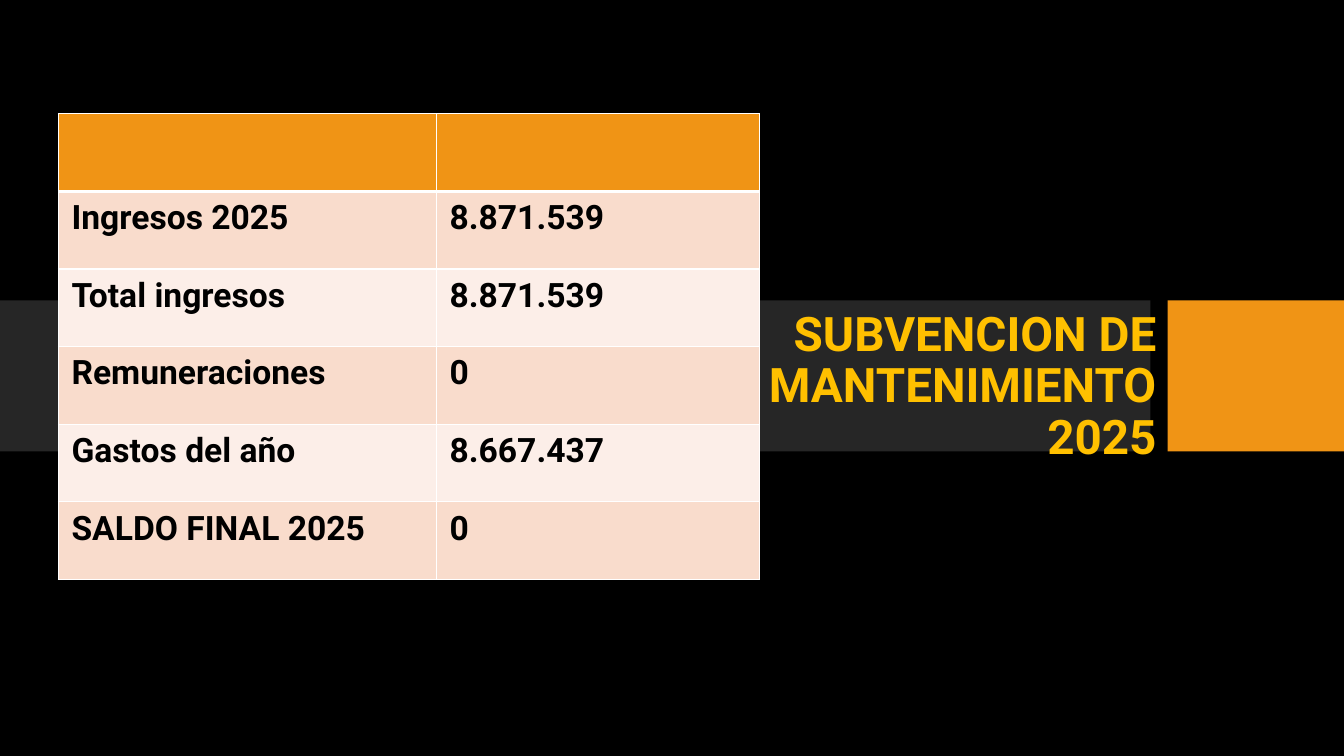
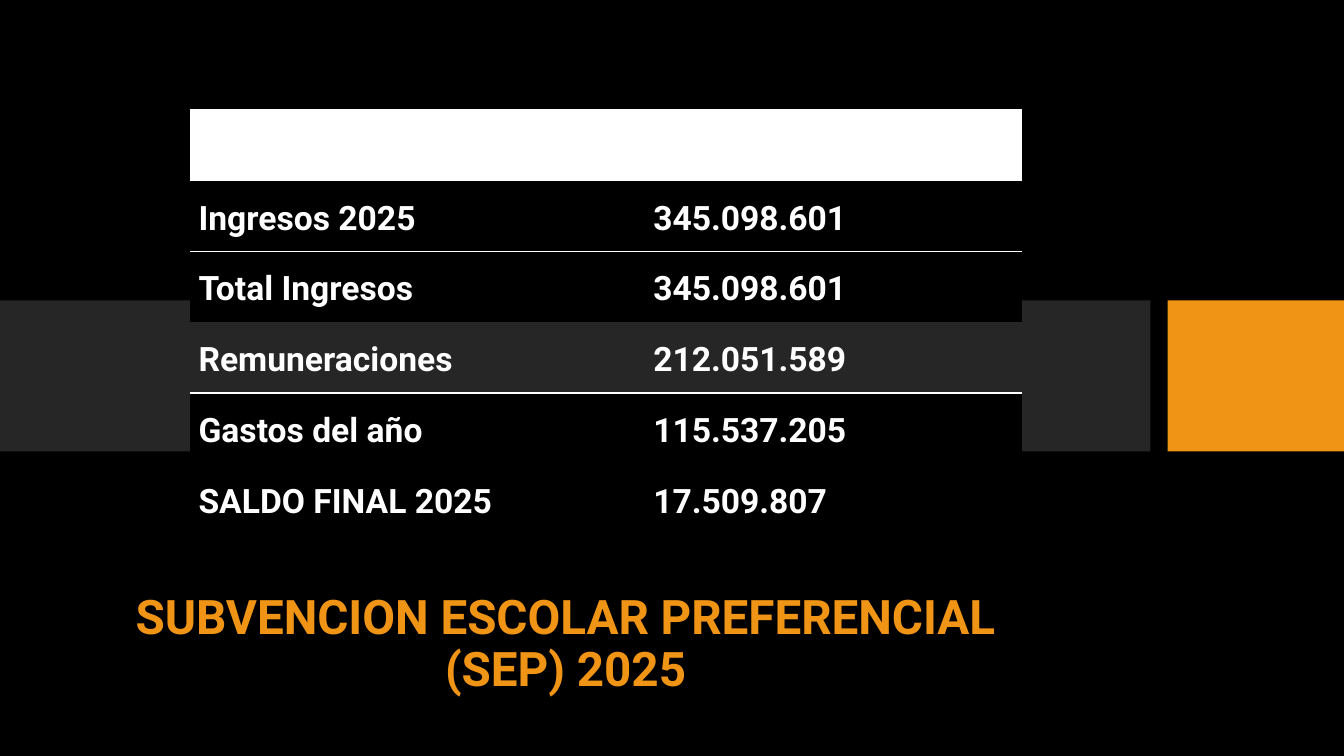
"""Build two budget slides, each with a title and a table of amounts."""
from dataclasses import dataclass

from lxml import etree
from pptx import Presentation
from pptx.dml.color import RGBColor
from pptx.enum.shapes import MSO_SHAPE
from pptx.enum.text import MSO_ANCHOR, MSO_AUTO_SIZE, PP_ALIGN
from pptx.oxml.ns import qn
from pptx.util import Emu, Pt

RECTANGLE = MSO_SHAPE.RECTANGLE
BOTTOM = MSO_ANCHOR.BOTTOM
NO_AUTOFIT = MSO_AUTO_SIZE.NONE
CENTER, RIGHT = PP_ALIGN.CENTER, PP_ALIGN.RIGHT
EMU_PER_PX = 9144
TITLE_ONLY = 5


@dataclass(frozen=True)
class Theme:
    """Colours, font and type sizes of the deck."""
    black: str = "000000"
    white: str = "FFFFFF"
    band: str = "262626"
    orange: str = "F09415"
    gold: str = "FFC000"
    peach: str = "F9DCCC"
    pale_peach: str = "FCEEE8"
    font: str = "Roboto"
    title_size: int = 34
    cell_size: int = 24


THEME = Theme()


@dataclass(frozen=True)
class TableLook:
    """Colours, rules (points) and insets (px) of one table."""
    text_color: str
    row_fills: tuple
    row_rules: tuple
    column_rule: int
    insets: tuple


BANDED = TableLook(
    THEME.black,
    (THEME.orange,) + (THEME.peach, THEME.pale_peach) * 2 + (THEME.peach,),
    (1, 3, 1, 1, 1, 1, 1), 1, (13, 7, 13, 7))
RULED = TableLook(
    THEME.white,
    (THEME.white,) + (None, THEME.black) * 2 + (None,),
    (1, 0, 1, 0, 1, 0, 0), 0, (9, 18, 6, 13))


def px(length):
    """Turn px into EMU."""
    return Emu(length * EMU_PER_PX)


def paint(fill, color):
    """Fill with a colour, or leave clear when there is none."""
    if color is None:
        fill.background()
    else:
        fill.solid()
        fill.fore_color.rgb = RGBColor.from_string(color)


def style_font(font, size, color):
    """Apply the bold deck font."""
    font.name = THEME.font
    font.size = Pt(size)
    font.bold = True
    font.color.rgb = RGBColor.from_string(color)


def add_layout_band(slide, layout, box, color):
    """Draw a plain band and hand it over to the layout."""
    band = slide.shapes.add_shape(RECTANGLE, *map(px, box))
    band.shadow.inherit = False
    paint(band.fill, color)
    band.line.fill.background()
    layout.shapes.element.append(band.element)


def set_title(slide, text, box, color, alignment):
    """Place and format the title placeholder."""
    title = slide.shapes.title
    title.left, title.top, title.width, title.height = map(px, box)
    frame = title.text_frame
    frame.text = text
    frame.word_wrap = True
    frame.auto_size = NO_AUTOFIT
    frame.vertical_anchor = BOTTOM
    paragraph = frame.paragraphs[0]
    paragraph.alignment = alignment
    paragraph.line_spacing = 0.9
    style_font(paragraph.font, THEME.title_size, color)


def add_border(cell, side, width):
    """Add a white border, or an invisible one for width 0."""
    properties = cell._tc.get_or_add_tcPr()
    line = etree.SubElement(properties, qn(f"a:ln{side}"), w=str(Pt(width)))
    if width:
        solid = etree.SubElement(line, qn("a:solidFill"))
        etree.SubElement(solid, qn("a:srgbClr"), val=THEME.white)
    else:
        etree.SubElement(line, qn("a:noFill"))


def add_budget_table(slide, position, widths, heights, entries, look):
    """Add a table with an empty header row above the entries."""
    size = sum(widths), sum(heights)
    table = slide.shapes.add_table(
        len(heights), len(widths), *map(px, (*position, *size))).table
    for column, width in zip(table.columns, widths):
        column.width = px(width)
    for index, (row, height, texts) in enumerate(
            zip(table.rows, heights, [("", ""), *entries])):
        row.height = px(height)
        borders = {"L": look.column_rule, "R": look.column_rule,
                   "T": look.row_rules[index], "B": look.row_rules[index + 1]}
        for cell, text in zip(row.cells, texts):
            for side, width in borders.items():
                add_border(cell, side, width)
            paint(cell.fill, look.row_fills[index])
            (cell.margin_left, cell.margin_top,
             cell.margin_right, cell.margin_bottom) = map(px, look.insets)
            cell.text = text
            style_font(cell.text_frame.paragraphs[0].font,
                       THEME.cell_size, look.text_color)


def main():
    """Build and save the deck."""
    deck = Presentation()
    deck.slide_width, deck.slide_height = px(1333), px(750)
    paint(deck.slide_master.background.fill, THEME.black)
    layout = deck.slide_layouts[TITLE_ONLY]

    maintenance = deck.slides.add_slide(layout)
    add_layout_band(maintenance, layout, (0, 298, 1141, 150), THEME.band)
    add_layout_band(maintenance, layout, (1158, 298, 175, 150), THEME.orange)
    set_title(maintenance, "SUBVENCION DE MANTENIMIENTO 2025",
              (667, 138, 490, 328), THEME.gold, RIGHT)
    add_budget_table(maintenance, (58, 113), (375, 320), [77] * 6, [
        ("Ingresos 2025", "8.871.539"),
        ("Total ingresos", "8.871.539"),
        ("Remuneraciones", "0"),
        ("Gastos del año", "8.667.437"),
        ("SALDO FINAL 2025", "0"),
    ], BANDED)

    preferential = deck.slides.add_slide(layout)
    set_title(preferential, "SUBVENCION ESCOLAR PREFERENCIAL (SEP) 2025",
              (108, 498, 906, 198), THEME.orange, CENTER)
    add_budget_table(preferential, (188, 109), (451, 375), [59] + [69] * 5, [
        ("Ingresos 2025", "345.098.601"),
        ("Total Ingresos", "345.098.601"),
        ("Remuneraciones", "212.051.589"),
        ("Gastos del año", "115.537.205"),
        ("SALDO FINAL 2025", "17.509.807"),
    ], RULED)

    deck.save("out.pptx")


if __name__ == "__main__":
    main()
